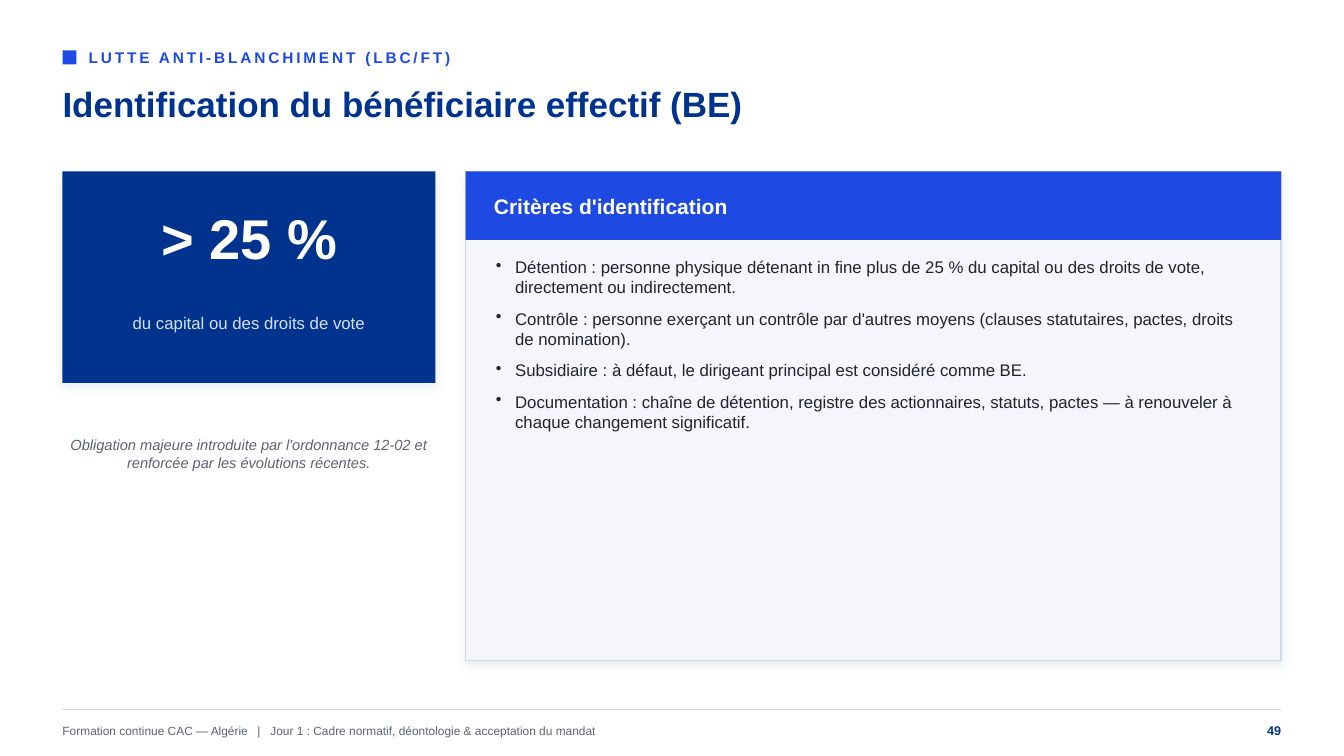
from pptx import Presentation
from pptx.dml.color import RGBColor
from pptx.enum import shapes, text
from pptx.oxml import ns
from pptx.util import Pt
from lxml import etree

NAVY = RGBColor(0x00, 0x33, 0x8D)
BLUE = RGBColor(0x1E, 0x49, 0xE2)
PALE_BLUE = RGBColor(0xD6, 0xE0, 0xF4)
PANEL = RGBColor(0xF4, 0xF6, 0xFB)
BORDER = RGBColor(0xD2, 0xD9, 0xE6)
INK = RGBColor(0x20, 0x24, 0x2E)
GREY = RGBColor(0x5A, 0x64, 0x73)
SHADOW = RGBColor(0x9A, 0xA7, 0xBD)
WHITE = RGBColor(0xFF, 0xFF, 0xFF)

FONT = "Arial"
LEFT, RIGHT = 44.64, 915.12
TOP = 122.4
CARD_WIDTH = 266.4
PANEL_LEFT = 332.64
PANEL_WIDTH = RIGHT - PANEL_LEFT
HEADER_HEIGHT = 48.96
FOOTER_TOP, FOOTER_HEIGHT = 511.2, 21.6
FOOTER_TABS = (139.2, 148.5)
BULLET_INDENT = 13.68

CRITERIA = [
    "Détention : personne physique détenant in fine plus de 25 % du capital "
    "ou des droits de vote, directement ou indirectement.",
    "Contrôle : personne exerçant un contrôle par d'autres moyens "
    "(clauses statutaires, pactes, droits de nomination).",
    "Subsidiaire : à défaut, le dirigeant principal est considéré comme BE.",
    "Documentation : chaîne de détention, registre des actionnaires, statuts, "
    "pactes — à renouveler à chaque changement significatif.",
]


def add_child(parent, tag, **attributes):
    child = etree.SubElement(parent, ns.qn(tag))
    for name, value in attributes.items():
        child.set(name, str(value))
    return child


def add_soft_shadow(shape):
    effects = shape._element.spPr.find(ns.qn("a:effectLst"))
    outer = add_child(effects, "a:outerShdw", blurRad=Pt(7), dist=Pt(3),
                      dir=90 * 60000, algn="ctr", rotWithShape=0)
    color = add_child(outer, "a:srgbClr", val=SHADOW)
    add_child(color, "a:alpha", val=22000)


def add_box(slide, left, top, width, height, fill, border=None, raised=False):
    shape = slide.shapes.add_shape(shapes.MSO_SHAPE.RECTANGLE, Pt(left), Pt(top),
                                   Pt(width), Pt(height))
    shape.shadow.inherit = False
    shape.fill.solid()
    shape.fill.fore_color.rgb = fill
    if border is None:
        shape.line.fill.background()
    else:
        shape.line.color.rgb = border
        shape.line.width = Pt(1)
    if raised:
        add_soft_shadow(shape)


def add_frame(slide, left, top, width, height, anchor=text.MSO_ANCHOR.MIDDLE):
    """Add a wrapping text box without margins and return its text frame."""
    frame = slide.shapes.add_textbox(Pt(left), Pt(top), Pt(width), Pt(height)).text_frame
    frame.word_wrap = True
    frame.vertical_anchor = anchor
    frame.margin_left = frame.margin_right = Pt(0)
    frame.margin_top = frame.margin_bottom = Pt(0)
    return frame


def add_run(paragraph, words, size, color, bold=False, italic=False):
    run = paragraph.add_run()
    run.text = words
    run.font.name = FONT
    run.font.size = Pt(size)
    run.font.color.rgb = color
    run.font.bold = bold
    run.font.italic = italic
    return run


def add_label(slide, left, top, width, height, words, size, color,
              align=text.PP_ALIGN.LEFT, **style):
    paragraph = add_frame(slide, left, top, width, height).paragraphs[0]
    paragraph.alignment = align
    return add_run(paragraph, words, size, color, **style)


def add_bullets(slide, left, top, width, height, items):
    frame = add_frame(slide, left, top, width, height, text.MSO_ANCHOR.TOP)
    for index, item in enumerate(items):
        paragraph = frame.add_paragraph() if index else frame.paragraphs[0]
        properties = paragraph._p.get_or_add_pPr()
        properties.set("marL", str(Pt(BULLET_INDENT)))
        properties.set("indent", str(-Pt(BULLET_INDENT)))
        add_child(properties, "a:buChar", char="•")
        paragraph.space_after = Pt(8)
        add_run(paragraph, item, 12, INK)


def add_heading(slide):
    add_box(slide, LEFT, 36, 10, 10, BLUE)
    section = add_label(slide, 63.36, 30.96, 864, 20.16,
                        "LUTTE ANTI-BLANCHIMENT (LBC/FT)", 11, BLUE, bold=True)
    section._r.get_or_add_rPr().set("spc", "200")
    add_label(slide, LEFT, 51.84, RIGHT - LEFT, 44.64,
              "Identification du bénéficiaire effectif (BE)", 25, NAVY, bold=True)


def add_threshold_card(slide):
    center = text.PP_ALIGN.CENTER
    add_box(slide, LEFT, TOP, CARD_WIDTH, 151.2, NAVY, raised=True)
    add_label(slide, LEFT, 133.2, CARD_WIDTH, 72, "> 25 %", 40, WHITE, center, bold=True)
    add_label(slide, LEFT, 205.2, CARD_WIDTH, 50.4,
              "du capital ou des droits de vote", 12, PALE_BLUE, center)
    add_label(slide, LEFT, 291.6, CARD_WIDTH, 64.8,
              "Obligation majeure introduite par l'ordonnance 12-02 et "
              "renforcée par les évolutions récentes.", 10.5, GREY, center, italic=True)


def add_criteria_panel(slide):
    add_box(slide, PANEL_LEFT, TOP, PANEL_WIDTH, 349.2, PANEL, BORDER, raised=True)
    add_box(slide, PANEL_LEFT, TOP, PANEL_WIDTH, HEADER_HEIGHT, BLUE)
    add_label(slide, PANEL_LEFT + 20.16, TOP, 546.48, HEADER_HEIGHT,
              "Critères d'identification", 15, WHITE, bold=True)
    add_bullets(slide, PANEL_LEFT + 21.6, 183.6, 539.28, 277.2, CRITERIA)


def add_footer(slide):
    rule = slide.shapes.add_connector(shapes.MSO_CONNECTOR.STRAIGHT,
                                      Pt(LEFT), Pt(506.88), Pt(RIGHT), Pt(506.88))
    rule.line.color.rgb = BORDER
    rule.line.width = Pt(1)
    add_child(rule._element.spPr, "a:effectLst")

    paragraph = add_frame(slide, LEFT, FOOTER_TOP, 756, FOOTER_HEIGHT).paragraphs[0]
    tabs = add_child(paragraph._p.get_or_add_pPr(), "a:tabLst")
    for position in FOOTER_TABS:
        add_child(tabs, "a:tab", pos=Pt(position), algn="l")
    add_run(paragraph, "Formation continue CAC — Algérie\t|\t"
            "Jour 1 : Cadre normatif, déontologie & acceptation du mandat", 8.5, GREY)
    add_label(slide, RIGHT - 72, FOOTER_TOP, 72, FOOTER_HEIGHT, "49", 9, NAVY,
              text.PP_ALIGN.RIGHT, bold=True)


def main():
    presentation = Presentation()
    presentation.slide_width = Pt(960)
    presentation.slide_height = Pt(540)
    slide = presentation.slides.add_slide(presentation.slide_layouts[6])
    add_heading(slide)
    add_threshold_card(slide)
    add_criteria_panel(slide)
    add_footer(slide)
    presentation.save("out.pptx")


if __name__ == "__main__":
    main()
